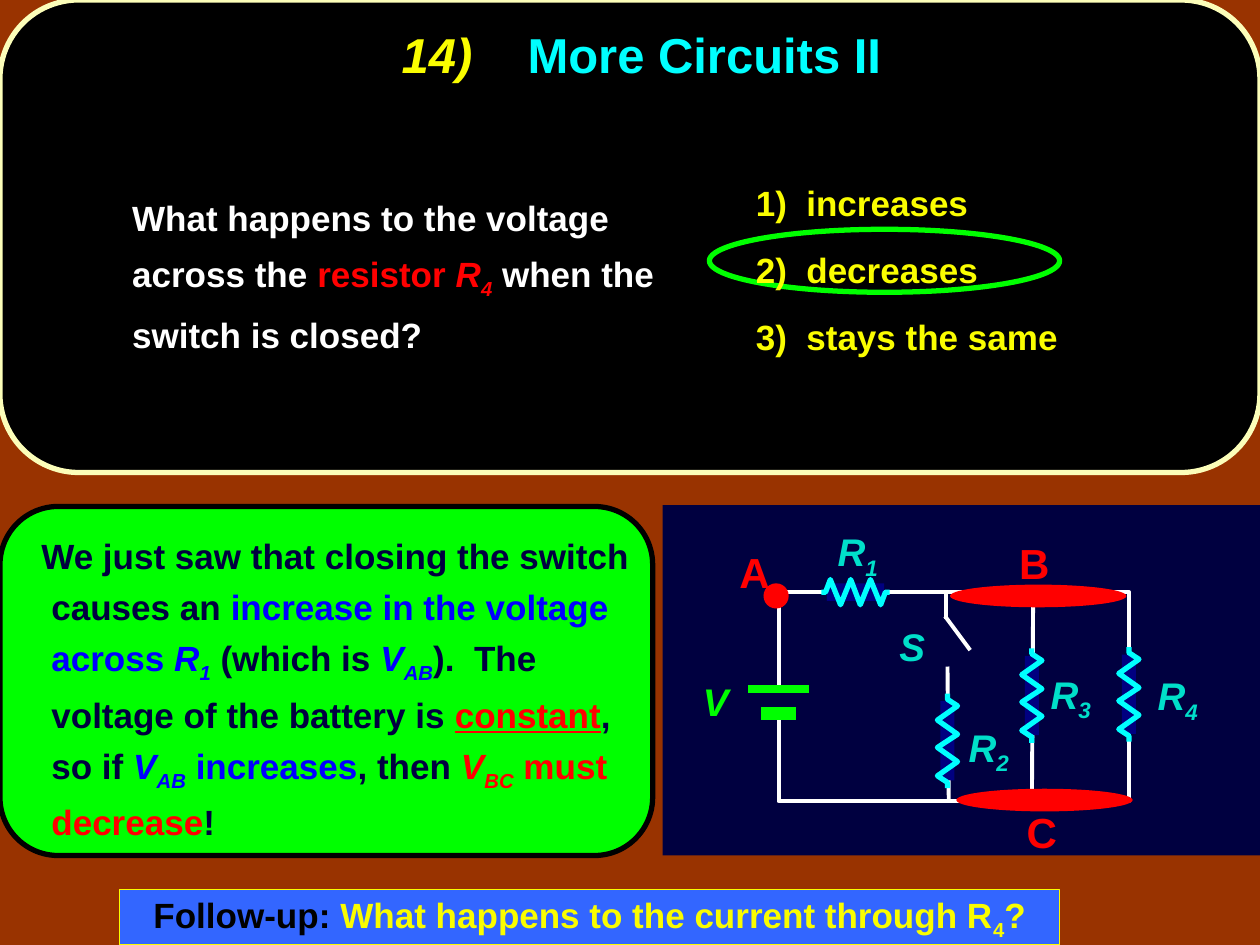
from lxml.etree import SubElement
from pptx import Presentation
from pptx.dml.color import RGBColor
from pptx.enum.shapes import MSO_CONNECTOR, MSO_SHAPE
from pptx.enum.text import MSO_ANCHOR, PP_ALIGN
from pptx.oxml.ns import qn
from pptx.util import Inches, Pt

FONT = "Arial"
C = {"rust": "993300", "black": "000000", "cream": "FCFEB9", "green": "00FF00",
     "navy": "000040", "indigo": "000080", "white": "FFFFFF", "cyan": "00FFFF",
     "teal": "00DFCA", "red": "FF0000", "blue": "0000FF", "yellow": "FAFD00",
     "royal": "3366FF"}

# Content: runs are (text, colour, style); i italic, u underline, s subscript
TITLE = [("14)\t", "yellow", "i"), ("More Circuits II", "cyan", "")]
QUESTION = [("\tWhat happens to the voltage across the ", "white", ""),
            ("resistor ", "red", ""), ("R", "red", "i"), ("4", "red", "is"),
            (" when the switch is closed?", "white", "")]
OPTIONS = ["1)  increases", "2)  decreases", "3)  stays the same"]
ANSWER = [("We just saw that closing the switch causes an ", "navy", ""),
          ("increase in the voltage across ", "blue", ""),
          ("R", "blue", "i"), ("1", "blue", "is"), (" (which is ", "navy", ""),
          ("V", "blue", "i"), ("AB", "blue", "is"),
          (").  The voltage of the battery is ", "navy", ""),
          ("constant", "red", "u"), (", so if ", "navy", ""),
          ("V", "blue", "i"), ("AB", "blue", "is"), (" increases", "blue", ""),
          (", then ", "navy", ""), ("V", "red", "i"), ("BC", "red", "is"),
          (" must decrease", "red", ""), ("!", "navy", "")]
FOLLOW_UP = [("Follow-up: ", "black", ""),
             ("What happens to the current through R", "yellow", ""),
             ("4", "yellow", "s"), ("?", "yellow", "")]

# Circuit grid: columns and rows of the wiring, in inches
X = {"battery": 6.18, "switch": 7.52, "R3": 8.19, "R4": 8.96}
Y = {"top": 4.7, "bottom": 6.36}
RESISTORS = [  # centre x, centre y, length, half swing, vertical
    (6.79, Y["top"], 0.54, 0.1, False), (X["R3"], 5.52, 0.75, 0.08, True),
    (X["R4"], 5.51, 0.75, 0.08, True), (X["switch"], 5.88, 0.75, 0.08, True)]
ZIGZAG = [(0, 0), (0.06, 0), (0.13, -1), (0.28, 1), (0.43, -1), (0.57, 1),
          (0.72, -1), (0.87, 1), (0.94, 0), (1, 0)]
WIRES = [((X["R3"], Y["bottom"]), (8.2, 4.72)),
         ((7.53, Y["bottom"]), (X["switch"], 5.29)),
         ((7.51, 4.91), (7.51, Y["top"])), ((7.7, 5.16), (7.5, 4.89))]
PLATES = [(5.66, 0.14, 7.5), (5.47, 0.24, 4.5)]  # y, half length, thickness
SYMBOLS = [("R", "1", 6.55, 4.15), ("R", "3", 8.24, 5.28), ("R", "4", 9.09, 5.29),
           ("R", "2", 7.59, 5.7), ("S", "", 7.04, 4.94)]
NODES = [("A", 5.77, 4.29), ("B", 7.99, 4.22), ("C", 8.05, 6.35)]
DOTS = [(6.06, 4.63, 0.2, 0.2), (7.54, 4.64, 1.4, 0.18), (7.59, 6.26, 1.4, 0.18)]

prs = Presentation()
prs.slide_width, prs.slide_height = Inches(10), Inches(7.5)
s = prs.slides.add_slide(prs.slide_layouts[6])
s.background.fill.solid()
s.background.fill.fore_color.rgb = RGBColor.from_string(C["rust"])


def paint(sp, fill=None, line=None, width=1):
    sp.shadow.inherit = False
    if fill:
        sp.fill.solid()
        sp.fill.fore_color.rgb = RGBColor.from_string(C[fill])
    else:
        sp.fill.background()
    if line:
        sp.line.color.rgb = RGBColor.from_string(C[line])
        sp.line.width = Pt(width)
    else:
        sp.line.fill.background()
    return sp


def shape(kind, box, fill=None, line=None, width=1):
    sp = s.shapes.add_shape(kind, *map(Inches, box))
    return paint(sp, fill, line, width)


def wire(start, end, colour="white", width=2.25):
    ln = s.shapes.add_connector(MSO_CONNECTOR.STRAIGHT, *map(Inches, start + end))
    ln.line.color.rgb = RGBColor.from_string(C[colour])
    ln.line.width = Pt(width)
    SubElement(ln._element.spPr, qn("a:effectLst"))


def resistor(cx, cy, length, swing, vertical):
    back, thick = length * 0.84, swing * 1.4
    w, h = (thick, back) if vertical else (back, thick)
    shape(MSO_SHAPE.RECTANGLE, (cx - w / 2, cy - h / 2, w, h), "indigo")
    pts = []
    for along, side in ZIGZAG:
        a, b = (along - 0.5) * length, side * swing
        x, y = (cx + b, cy - a) if vertical else (cx + a, cy + b)
        pts.append((Inches(x), Inches(y)))
    fb = s.shapes.build_freeform(*pts[0])
    fb.add_line_segments(pts[1:], close=False)
    paint(fb.convert_to_shape(), line="cyan", width=3)


def write(tf, paragraphs, size, spacing=1.0, align=PP_ALIGN.LEFT, before=0,
          indent=None):
    for i, runs in enumerate(paragraphs):
        p = tf.paragraphs[0] if i == 0 else tf.add_paragraph()
        p.alignment, p.line_spacing, p.space_before = align, spacing, Pt(before)
        if indent:
            pPr = p._p.get_or_add_pPr()
            pPr.set("marL", str(Inches(indent[0])))
            pPr.set("indent", str(Inches(indent[1])))
        for text, colour, style in runs:
            r = p.add_run()
            r.text = text
            r.font.name, r.font.size, r.font.bold = FONT, Pt(size), True
            r.font.italic, r.font.underline = "i" in style, "u" in style
            r.font.color.rgb = RGBColor.from_string(C[colour])
            if "s" in style:
                r._r.get_or_add_rPr().set("baseline", "-25000")


def text(box, paragraphs, size, wrap=True, anchor=MSO_ANCHOR.TOP, **layout):
    tf = s.shapes.add_textbox(*map(Inches, box)).text_frame
    tf.word_wrap, tf.vertical_anchor = wrap, anchor
    write(tf, paragraphs, size, **layout)


# Question panel and ring around the right option
shape(MSO_SHAPE.ROUNDED_RECTANGLE, (0, 0, 10, 3.75), "black", "cream", 3)
shape(MSO_SHAPE.OVAL, (5.63, 1.82, 2.78, 0.5), line="green", width=3)

# Circuit: panel, outer loop, battery
shape(MSO_SHAPE.RECTANGLE, (5.26, 4.01, 4.74, 2.78), "navy")
shape(MSO_SHAPE.RECTANGLE, (X["battery"], Y["top"], X["R4"] - X["battery"],
                            Y["bottom"] - Y["top"]), line="white", width=2.25)
shape(MSO_SHAPE.RECTANGLE, (X["battery"] - 0.14, 5.5, 0.27, 0.13),
      "navy", "navy", 1.5)
for y, half, width in PLATES:
    wire((X["battery"] - half, y), (X["battery"] + half, y), "green", width)

# Circuit: branches, resistors, nodes
for start, end in WIRES:
    wire(start, end)
for part in RESISTORS:
    resistor(*part)
for box in DOTS:
    shape(MSO_SHAPE.OVAL, box, "red")

# Circuit: labels
text((5.48, 5.37, 0.4, 0.43), [[("V", "green", "i")]], 22, wrap=False, spacing=0.9)
for letter, index, x, y in SYMBOLS:
    runs = [(letter, "teal", "i")] + ([(index, "teal", "is")] if index else [])
    text((x, y, 0.54 if index else 0.4, 0.43), [runs], 22, wrap=False, spacing=0.9)
for letter, x, y in NODES:
    text((x, y, 0.42, 0.5), [[(letter, "red", "")]], 24, wrap=False)

# Explanation
shape(MSO_SHAPE.ROUNDED_RECTANGLE, (0, 4.02, 5.18, 2.77), "green", "black", 3)
text((0, 4.13, 5.13, 2.54), [ANSWER], 20, spacing=1.2, before=10,
     indent=(0.31, -0.08))

# Question, options, title
text((0.51, 1.41, 4.89, 1.67), [QUESTION], 20, spacing=1.3, before=6,
     indent=(0.44, -0.44))
text((5.9, 1.19, 3.02, 1.7), [[(o, "yellow", "")] for o in OPTIONS], 20, spacing=1.6)
text((0.69, 0, 8.8, 0.92), [TITLE], 28, anchor=MSO_ANCHOR.MIDDLE, spacing=0.9,
     align=PP_ALIGN.CENTER)

# Follow-up bar
bar = shape(MSO_SHAPE.RECTANGLE, (0.95, 7.06, 7.46, 0.44), "royal", "yellow", 0.75)
write(bar.text_frame, [FOLLOW_UP], 20, align=PP_ALIGN.CENTER)

prs.save("out.pptx")
